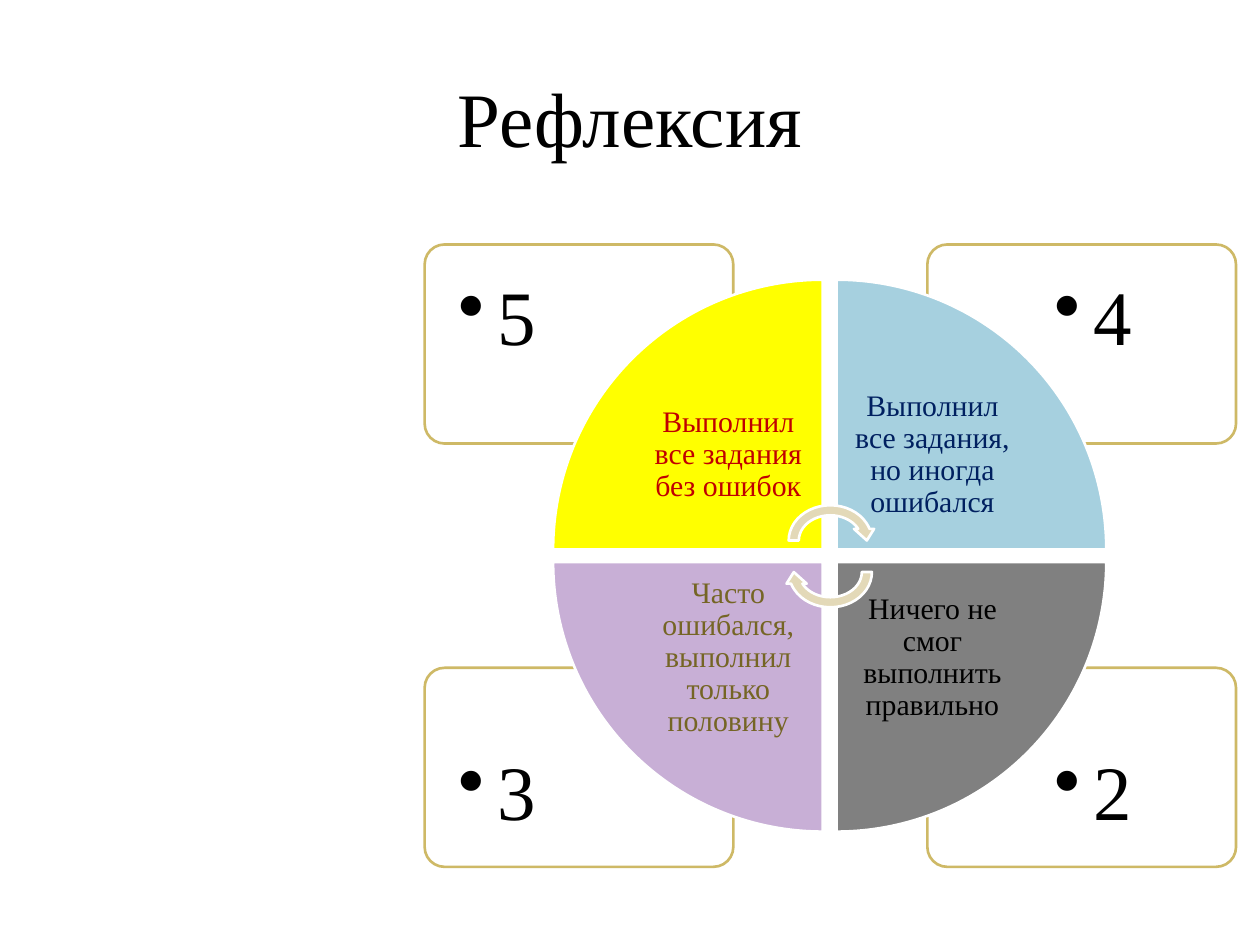
from dataclasses import dataclass

from lxml import etree
from pptx import Presentation
from pptx import util as u
from pptx.dml.color import RGBColor
from pptx.enum import shapes, text
from pptx.oxml.ns import qn

FONT = "Times New Roman"
BLACK, WHITE, GOLD, SAND = "000000", "FFFFFF", "CEB966", "E3D9B8"

CARD_WIDTH, CARD_HEIGHT = 2.45, 1.58
CARD_X, CARD_Y = (3.37, 7.36), (1.94, 5.3)
GRADE_WIDTH, GRADE_HEIGHT = 1.64, 1.12
GRADE_X, GRADE_Y = (3.4, 8.13), (1.97, 5.74)
WEDGE_SIZE = 2.14
WEDGE_X, WEDGE_Y = (4.39, 6.64), (2.22, 4.46)
LABEL_SIZE = 1.52
LABEL_X, LABEL_Y = (5.02, 6.64), (2.85, 4.46)


@dataclass
class Quadrant:
    column: int
    row: int
    rotation: int
    grade: str
    label: str
    fill: str
    label_color: str


# Clockwise from the top left
QUADRANTS = [
    Quadrant(0, 0, 0, "5", "Выполнил все задания без ошибок", "FFFF00", "C00000"),
    Quadrant(1, 0, 90, "4", "Выполнил все задания, но иногда ошибался", "A6D0DF", "002060"),
    Quadrant(1, 1, 180, "2", "Ничего не смог выполнить правильно", "808080", BLACK),
    Quadrant(0, 1, 270, "3", "Часто ошибался, выполнил только половину", "C8AFD6", "756525"),
]


def color(hex_value: str) -> RGBColor:
    return RGBColor.from_string(hex_value)


def add_outlined_shape(slide, kind, left: float, top: float, width: float,
                       height: float, fill: str, line: str, rotation: int = 0):
    shape = slide.shapes.add_shape(kind, u.Inches(left), u.Inches(top),
                                   u.Inches(width), u.Inches(height))
    shape.shadow.inherit = False
    shape.rotation = rotation
    shape.fill.solid()
    shape.fill.fore_color.rgb = color(fill)
    shape.line.color.rgb = color(line)
    shape.line.width = u.Pt(1.5)
    return shape


def add_text(slide, words: str, left: float, top: float, width: float, height: float,
             size: int, font_color: str, inset: float, line_spacing: float = 1.0,
             bullet: bool = False) -> None:
    """Add centred text, or a bulleted line at the top left of its box."""
    box = slide.shapes.add_textbox(u.Inches(left), u.Inches(top),
                                   u.Inches(width), u.Inches(height))
    frame = box.text_frame
    frame.word_wrap = True
    frame.margin_left = frame.margin_right = u.Inches(inset)
    frame.margin_top = frame.margin_bottom = u.Inches(inset)
    paragraph = frame.paragraphs[0]
    paragraph.text = words
    paragraph.line_spacing = line_spacing
    if bullet:
        frame.vertical_anchor = text.MSO_ANCHOR.TOP
        paragraph.level = 1
        properties = paragraph._p.get_or_add_pPr()
        properties.set("marL", str(u.Inches(0.31)))
        properties.set("indent", str(-u.Inches(0.31)))
        etree.SubElement(properties, qn("a:buChar")).set("char", "•")
    else:
        frame.vertical_anchor = text.MSO_ANCHOR.MIDDLE
        paragraph.alignment = text.PP_ALIGN.CENTER
    paragraph.font.name = FONT
    paragraph.font.size = u.Pt(size)
    paragraph.font.color.rgb = color(font_color)


def add_card(slide, quadrant: Quadrant) -> None:
    column, row = quadrant.column, quadrant.row
    card = add_outlined_shape(slide, shapes.MSO_SHAPE.ROUNDED_RECTANGLE,
                              CARD_X[column], CARD_Y[row], CARD_WIDTH, CARD_HEIGHT,
                              WHITE, GOLD)
    card.adjustments[0] = 0.1
    fill_color = card._element.spPr.find(qn("a:solidFill"))[0]
    etree.SubElement(fill_color, qn("a:alpha")).set("val", "90000")
    add_text(slide, quadrant.grade, GRADE_X[column], GRADE_Y[row],
             GRADE_WIDTH, GRADE_HEIGHT, 44, BLACK, 0.24, 0.9, bullet=True)


def add_wedge(slide, quadrant: Quadrant) -> None:
    column, row = quadrant.column, quadrant.row
    add_outlined_shape(slide, shapes.MSO_SHAPE.PIE_WEDGE, WEDGE_X[column], WEDGE_Y[row],
                       WEDGE_SIZE, WEDGE_SIZE, quadrant.fill, WHITE, quadrant.rotation)
    add_text(slide, quadrant.label, LABEL_X[column], LABEL_Y[row],
             LABEL_SIZE, LABEL_SIZE, 17, quadrant.label_color, 0.13, 0.9)


def main() -> None:
    presentation = Presentation()
    presentation.slide_width = u.Inches(10)
    presentation.slide_height = u.Inches(7.5)
    slide = presentation.slides.add_slide(presentation.slide_layouts[6])

    add_text(slide, "Рефлексия", 0.5, 0.3, 9, 1.25, 44, BLACK, 0.05)
    for quadrant in QUADRANTS:
        add_card(slide, quadrant)
    for quadrant in QUADRANTS:
        add_wedge(slide, quadrant)
    for top, rotation in ((3.97, 0), (4.22, 180)):
        add_outlined_shape(slide, shapes.MSO_SHAPE.CIRCULAR_ARROW, 6.22, top, 0.74, 0.64,
                           SAND, WHITE, rotation)

    presentation.save("out.pptx")


if __name__ == "__main__":
    main()
